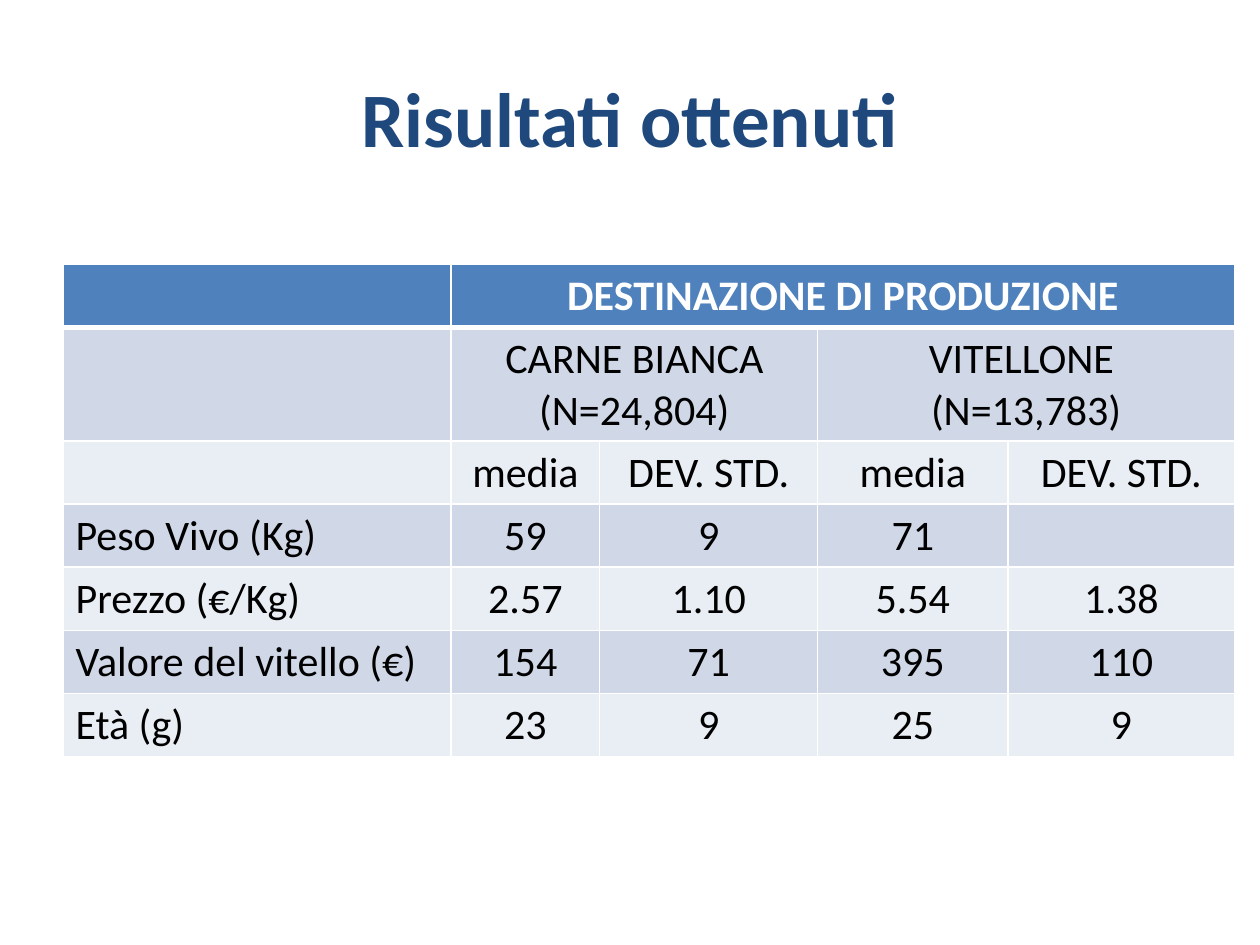
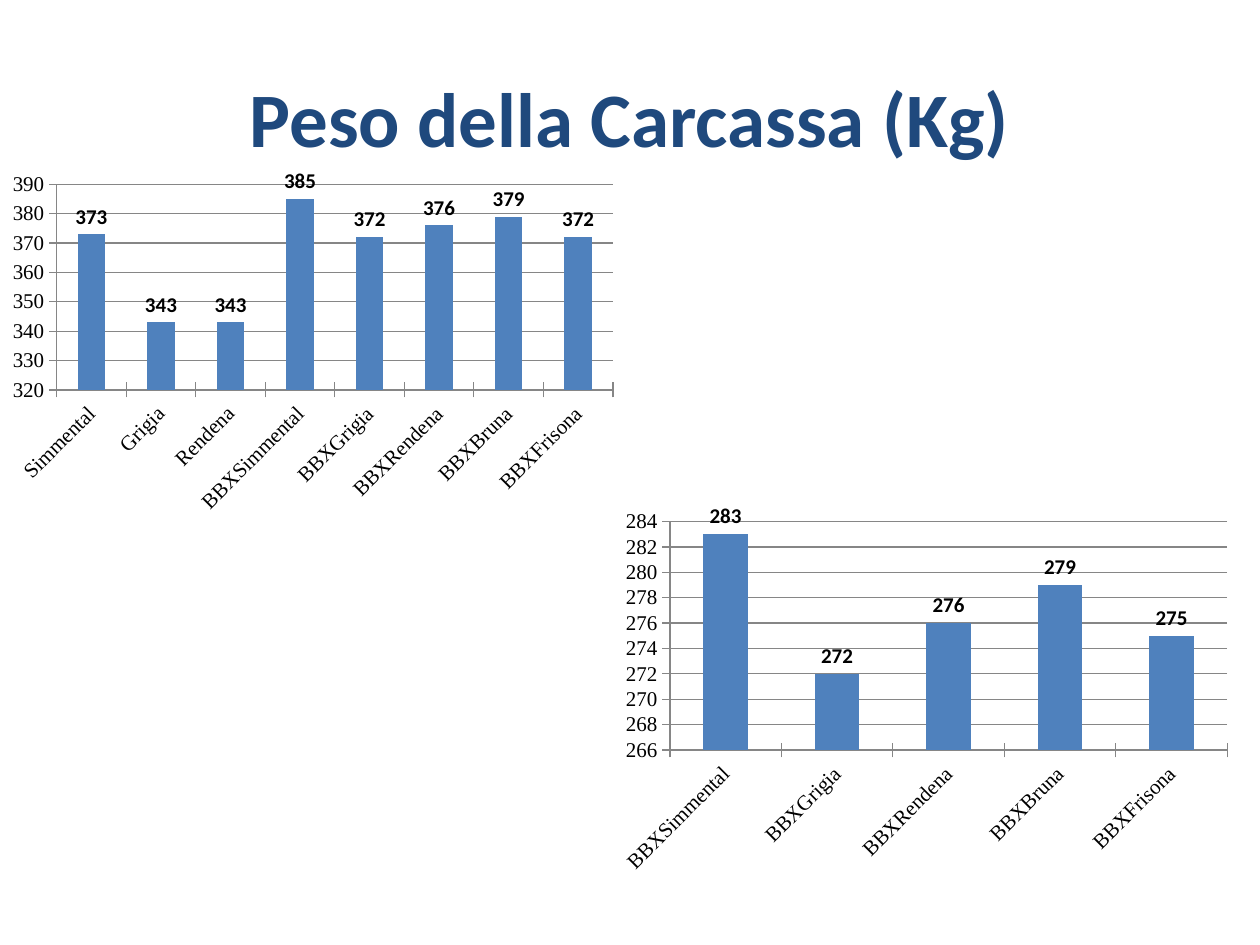
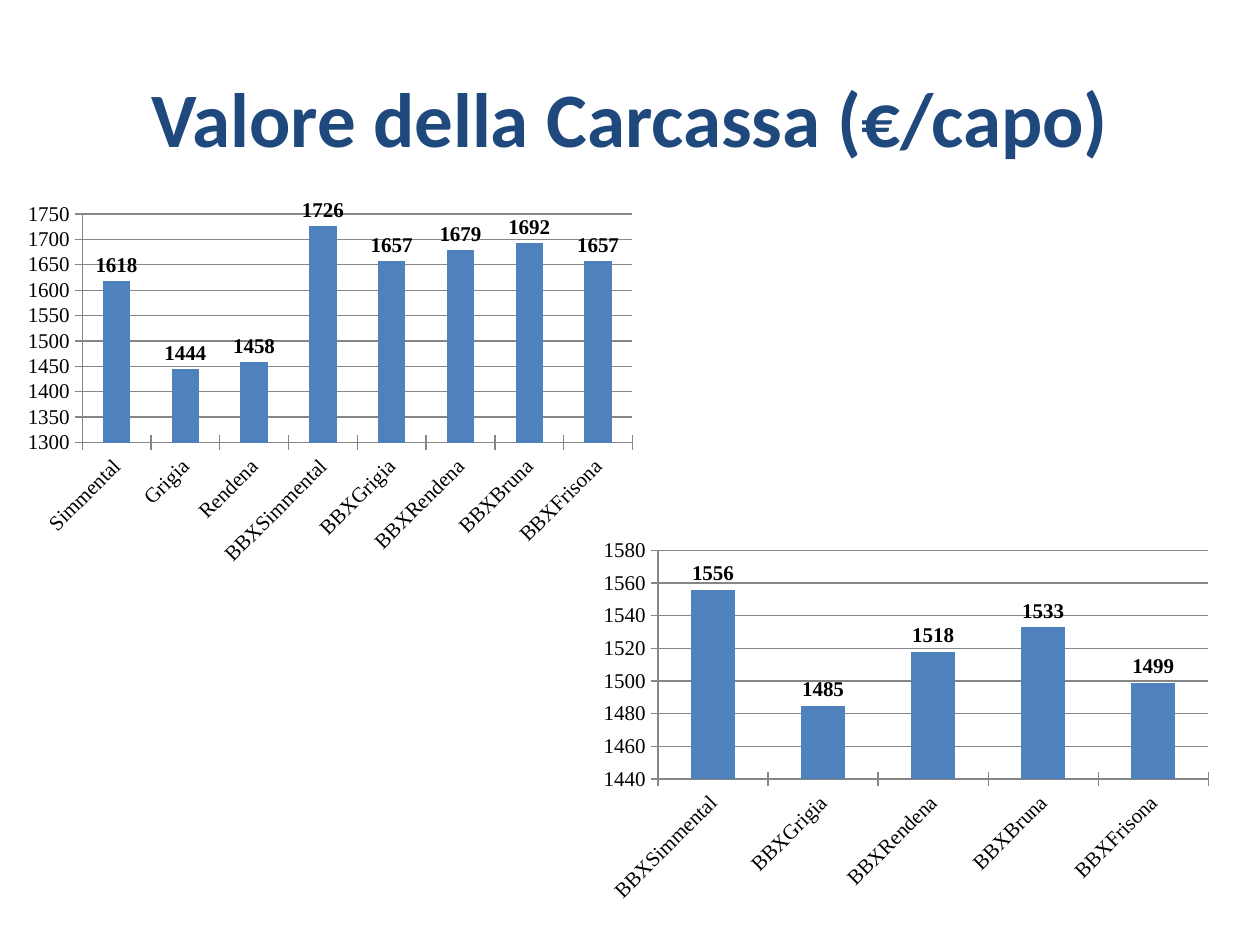
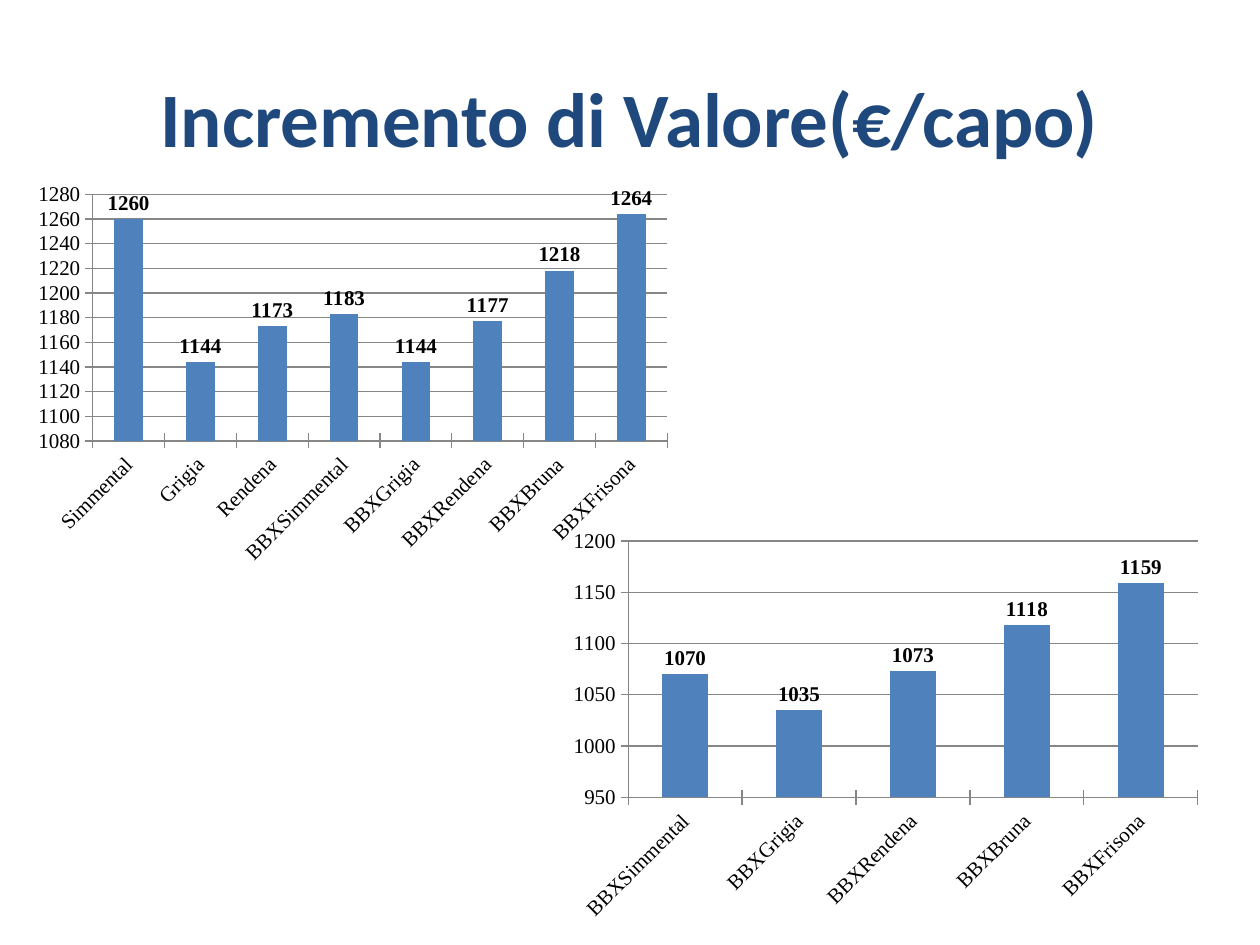
from lxml import etree
from pptx import Presentation
from pptx import util as u
from pptx.chart.data import CategoryChartData
from pptx.dml.color import RGBColor
from pptx.enum import chart as charts, text
from pptx.oxml.ns import qn

COLORS = {
    "title": "1F497D",
    "accent": "4F81BD",
    "band_dark": "D0D8E8",
    "band_light": "E9EDF4",
    "white": "FFFFFF",
    "black": "000000",
    "grid": "868686",
}
SANS, SERIF = "Calibri", "Times New Roman"
WIDTH, HEIGHT = 10, 7.5

CROSSES = ["BBXSimmental", "BBXGrigia", "BBXRendena", "BBXBruna", "BBXFrisona"]
ALL_BREEDS = ["Simmental", "Grigia", "Rendena"] + CROSSES

TABLE_TITLE = "Risultati ottenuti"
TABLE_BOX = (0.5, 2.1, 9.3, 2.87)
COLUMN_WIDTHS = [3.08, 1.18, 1.73, 1.51, 1.8]
TABLE_ROWS = [
    ["", "DESTINAZIONE DI PRODUZIONE", "", "", ""],
    ["", "CARNE BIANCA (N=24,804)", "", "VITELLONE \n(N=13,783)", ""],
    ["", "media", "DEV. STD.", "media", "DEV. STD."],
    ["Peso Vivo (Kg)", "59", "9", "71", ""],
    ["Prezzo (€/Kg)", "2.57", "1.10", "5.54", "1.38"],
    ["Valore del vitello (€)", "154", "71", "395", "110"],
    ["Età (g)", "23", "9", "25", "9"],
]
MERGES = [(0, 1, 4), (1, 1, 2), (1, 3, 4)]

CHART_SLIDES = [
    {
        "title": "Peso della Carcassa (Kg)",
        "label_font": SANS,
        "charts": [
            {"box": (0.02, 1.31, 5, 2.79), "breeds": ALL_BREEDS, "scale": (320, 390, 10),
             "values": [373, 343, 343, 385, 372, 376, 379, 372],
             "plot": {"x": 0.086, "y": 0.055, "w": 0.883, "h": 0.585}},
            {"box": (4.84, 3.99, 5, 3), "breeds": CROSSES, "scale": (266, 284, 2),
             "values": [283, 272, 276, 279, 275]},
        ],
    },
    {
        "title": "Valore della Carcassa (€/capo)",
        "label_font": SERIF,
        "charts": [
            {"box": (0.12, 1.55, 5, 3), "breeds": ALL_BREEDS, "scale": (1300, 1750, 50),
             "values": [1618, 1444, 1458, 1726, 1657, 1679, 1692, 1657]},
            {"box": (4.69, 4.22, 5, 3), "breeds": CROSSES, "scale": (1440, 1580, 20),
             "values": [1556, 1485, 1518, 1533, 1499]},
        ],
    },
    {
        "title": "Incremento di Valore(€/capo)",
        "label_font": SERIF,
        "charts": [
            {"box": (0.2, 1.39, 5.2, 3.15), "breeds": ALL_BREEDS, "scale": (1080, 1280, 20),
             "values": [1260, 1144, 1173, 1183, 1144, 1177, 1218, 1264]},
            {"box": (4.45, 4.14, 5.16, 3.23), "breeds": CROSSES, "scale": (950, 1200, 50),
             "values": [1070, 1035, 1073, 1118, 1159]},
        ],
    },
]


def color(name):
    return RGBColor.from_string(COLORS[name])


def inches(box):
    return [u.Inches(length) for length in box]


def style_font(font, name, size, color_name, bold=False):
    font.name = name
    font.size = u.Pt(size)
    font.bold = bold
    font.color.rgb = color(color_name)


def add_titled_slide(presentation, title):
    slide = presentation.slides.add_slide(presentation.slide_layouts[6])
    box = (0.05 * WIDTH, 0.04 * HEIGHT, 0.9 * WIDTH, HEIGHT / 6)
    frame = slide.shapes.add_textbox(*inches(box)).text_frame
    frame.word_wrap = True
    frame.vertical_anchor = text.MSO_ANCHOR.MIDDLE
    frame.text = title
    paragraph = frame.paragraphs[0]
    paragraph.alignment = text.PP_ALIGN.CENTER
    style_font(paragraph.runs[0].font, SANS, 44, "title", True)
    return slide


def set_borders(cell, top, bottom):
    properties = cell._tc.get_or_add_tcPr()
    widths = {"a:lnL": 1, "a:lnR": 1, "a:lnT": top, "a:lnB": bottom}
    for position, (side, width) in enumerate(widths.items()):
        line = etree.Element(qn(side), w=str(u.Pt(width)))
        fill = etree.SubElement(line, qn("a:solidFill"))
        etree.SubElement(fill, qn("a:srgbClr"), val=COLORS["white"])
        properties.insert(position, line)


def fill_cell(cell, content, row, column):
    header = row == 0
    band = "accent" if header else "band_dark" if row % 2 else "band_light"
    cell.fill.solid()
    cell.fill.fore_color.rgb = color(band)
    set_borders(cell, 3 if row == 1 else 1, 3 if header else 1)
    if not content:
        return
    cell.text_frame.text = content
    for paragraph in cell.text_frame.paragraphs:
        if column:
            paragraph.alignment = text.PP_ALIGN.CENTER
        for run in paragraph.runs:
            style_font(run.font, SANS, 24, "white" if header else "black", header)


def add_results_table(slide):
    frame = slide.shapes.add_table(len(TABLE_ROWS), len(COLUMN_WIDTHS), *inches(TABLE_BOX))
    table = frame.table
    for column, width in zip(table.columns, COLUMN_WIDTHS):
        column.width = u.Inches(width)
    for row, first, last in MERGES:
        table.cell(row, first).merge(table.cell(row, last))
    for row, contents in enumerate(TABLE_ROWS):
        for column, content in enumerate(contents):
            fill_cell(table.cell(row, column), content, row, column)


def set_inner_plot(chart, shares):
    plot_area = chart._chartSpace.chart.plotArea
    for layout in plot_area.findall(qn("c:layout")):
        plot_area.remove(layout)
    layout = etree.Element(qn("c:layout"))
    manual = etree.SubElement(layout, qn("c:manualLayout"))
    settings = {"layoutTarget": "inner", "xMode": "edge", "yMode": "edge", **shares}
    for tag, value in settings.items():
        etree.SubElement(manual, qn("c:" + tag), val=str(value))
    plot_area.insert(0, layout)


def style_axis(axis):
    axis.major_tick_mark = charts.XL_TICK_MARK.CROSS
    axis.format.line.color.rgb = color("grid")
    style_font(axis.tick_labels.font, SERIF, 12, "black")


def add_breed_chart(slide, content, label_font):
    data = CategoryChartData()
    data.categories = content["breeds"]
    data.add_series("Series 1", content["values"])
    chart = slide.shapes.add_chart(
        charts.XL_CHART_TYPE.COLUMN_CLUSTERED, *inches(content["box"]), data).chart
    chart.has_title = False
    chart.has_legend = False
    style_font(chart.font, label_font, 12, "black")

    style_axis(chart.category_axis)
    rotation = chart.category_axis._element.find(qn("c:txPr")).find(qn("a:bodyPr"))
    rotation.set("rot", str(-45 * 60000))

    axis = chart.value_axis
    style_axis(axis)
    axis.minimum_scale, axis.maximum_scale, axis.major_unit = content["scale"]
    axis.has_major_gridlines = True
    axis.major_gridlines.format.line.color.rgb = color("grid")

    plot = chart.plots[0]
    plot.vary_by_categories = False
    plot.gap_width = 150
    fill = plot.series[0].format.fill
    fill.solid()
    fill.fore_color.rgb = color("accent")
    plot.has_data_labels = True
    labels = plot.data_labels
    labels.show_value = True
    labels.position = charts.XL_LABEL_POSITION.OUTSIDE_END
    style_font(labels.font, label_font, 12, "black", True)
    if "plot" in content:
        set_inner_plot(chart, content["plot"])


def main():
    presentation = Presentation()
    presentation.slide_width = u.Inches(WIDTH)
    presentation.slide_height = u.Inches(HEIGHT)
    add_results_table(add_titled_slide(presentation, TABLE_TITLE))
    for content in CHART_SLIDES:
        slide = add_titled_slide(presentation, content["title"])
        for chart_content in content["charts"]:
            add_breed_chart(slide, chart_content, content["label_font"])
    presentation.save("out.pptx")


if __name__ == "__main__":
    main()
